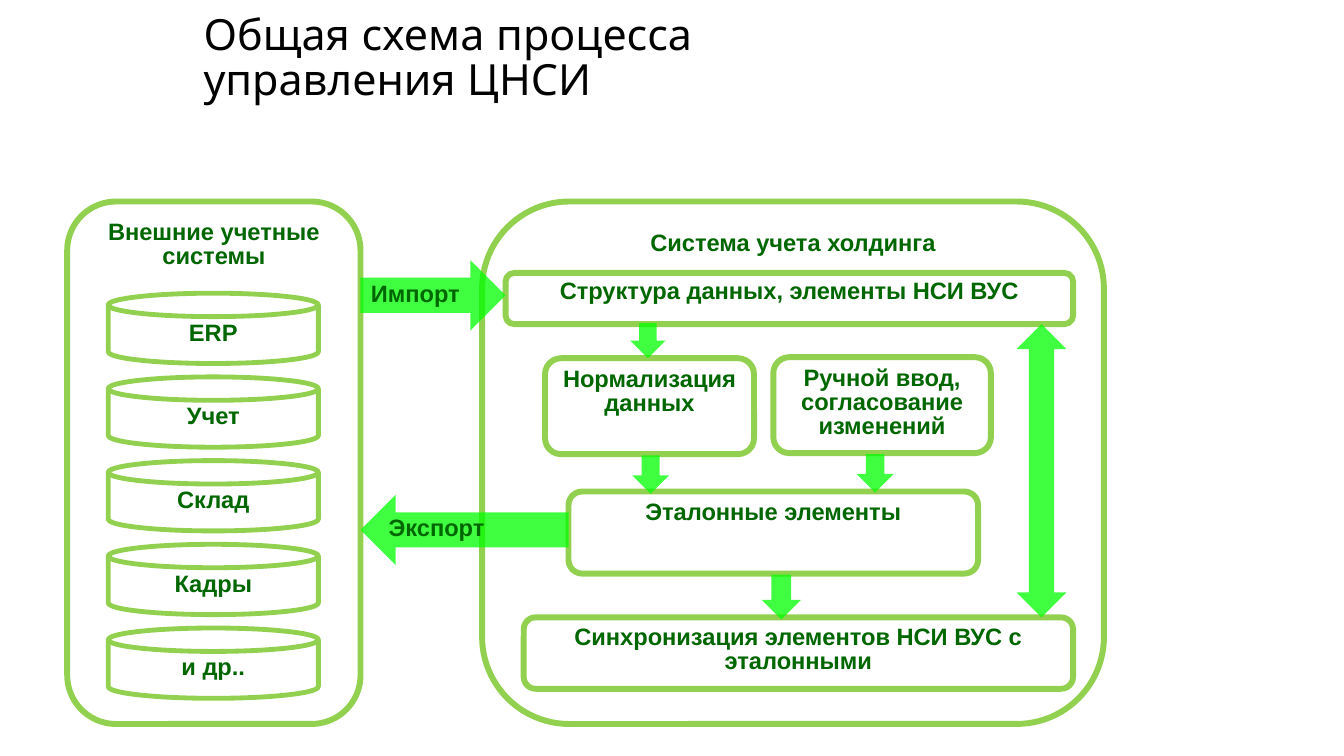
import pptx
import pptx.util
import pptx.dml.color
import pptx.enum.shapes
import pptx.enum.text
import pptx.oxml.ns
import lxml.etree

SHAPE = pptx.enum.shapes.MSO_SHAPE
ALIGN = pptx.enum.text.PP_ALIGN
ANCHOR = pptx.enum.text.MSO_ANCHOR

# Grid of square cells, a tenth of an inch each
CELL = pptx.util.Inches(0.1)
COLS, ROWS = 126, 70.9

OUTLINE, ARROW, LABEL, TITLE = "92D050", "00FF00", "006600", "000000"


def color(hex_code):
    return pptx.dml.color.RGBColor.from_string(hex_code)


def grid(*cells):
    return [round(c * CELL) for c in cells]


def write(sp, text, size, font, hex_code, bold, align, spacing):
    tf = sp.text_frame
    tf.word_wrap = True
    p = tf.paragraphs[0]
    p.text = text
    p.alignment = align
    p.line_spacing = spacing
    for r in p.runs:
        r.font.size = pptx.util.Pt(size)
        r.font.name = font
        r.font.bold = bold
        r.font.color.rgb = color(hex_code)


def label(sp, text, align=ALIGN.CENTER):
    sp.text_frame.vertical_anchor = ANCHOR.TOP
    write(sp, text, 16, "Arial", LABEL, True, align, 0.85)


def add_title(s, text, at):
    sp = s.shapes.add_textbox(*grid(*at))
    sp.text_frame.vertical_anchor = ANCHOR.MIDDLE
    write(sp, text, 29, "Quicksand", TITLE, False, ALIGN.LEFT, 0.87)


def add_outlined(s, kind, text, at, width=4):
    sp = s.shapes.add_shape(kind, *grid(*at))
    sp.shadow.inherit = False
    sp.fill.background()
    sp.line.color.rgb = color(OUTLINE)
    sp.line.width = pptx.util.Pt(width)
    label(sp, text)


def add_arrow(s, kind, at, text=None):
    sp = s.shapes.add_shape(kind, *grid(*at))
    sp.shadow.inherit = False
    sp.line.fill.background()
    sp.fill.solid()
    sp.fill.fore_color.rgb = color(ARROW)
    # Arrows let the outlines below show through
    qn = pptx.oxml.ns.qn
    clr = sp._element.spPr.find(qn("a:solidFill")).find(qn("a:srgbClr"))
    lxml.etree.SubElement(clr, qn("a:alpha")).set("val", "75000")
    if text:
        label(sp, text, ALIGN.LEFT)
    return sp


def main():
    prs = pptx.Presentation()
    prs.slide_width, prs.slide_height = grid(COLS, ROWS)
    s = prs.slides.add_slide(prs.slide_layouts[6])

    add_title(s, "Общая схема процесса \vуправления ЦНСИ", (18.1, 0, 97.3, 11.2))

    # Two panels, then the steps inside the right one
    for text, at in [
        ("Внешние учетные системы", (6.3, 18.9, 27.5, 49)),
        ("Система учета холдинга", (45.2, 18.9, 58.3, 49)),
        ("Нормализация данных", (51.1, 33.6, 19.6, 9)),
        ("Эталонные элементы", (53.3, 46.1, 38.4, 7.7)),
        ("Ручной ввод, согласование изменений", (72.5, 33.5, 20.4, 9)),
        ("Синхронизация элементов НСИ ВУС с эталонными",
         (49.1, 57.9, 51.5, 6.7)),
        ("Структура данных, элементы НСИ ВУС", (47.4, 25.6, 53.2, 4.8)),
    ]:
        add_outlined(s, SHAPE.ROUNDED_RECTANGLE, text, at)

    # External systems, evenly stacked
    for i, text in enumerate(["ERP", "Учет", "Склад", "Кадры", "и др.."]):
        add_outlined(s, SHAPE.FLOWCHART_MAGNETIC_DISK, text,
                     (10.15, 27.5 + 7.85 * i, 19.7, 6.6), 3.25)

    # Exchange between the panels
    add_arrow(s, SHAPE.RIGHT_ARROW, (33.8, 24.4, 13.6, 6.6), "Импорт")
    add_arrow(s, SHAPE.LEFT_ARROW, (33.8, 46.4, 19.5, 6.6), "Экспорт")

    # Flow from step to step
    for at in [(59.1, 30.3, 3.3, 3.3), (59.3, 42.7, 3.4, 3.6),
               (80.3, 42.6, 3.5, 3.6), (71.4, 53.9, 3.7, 4.2)]:
        add_arrow(s, SHAPE.DOWN_ARROW, at)
    sync = add_arrow(s, SHAPE.UP_DOWN_ARROW, (95.3, 30.4, 4.7, 27.5))
    sync.adjustments[0] = 0.36

    prs.save("out.pptx")


if __name__ == "__main__":
    main()
